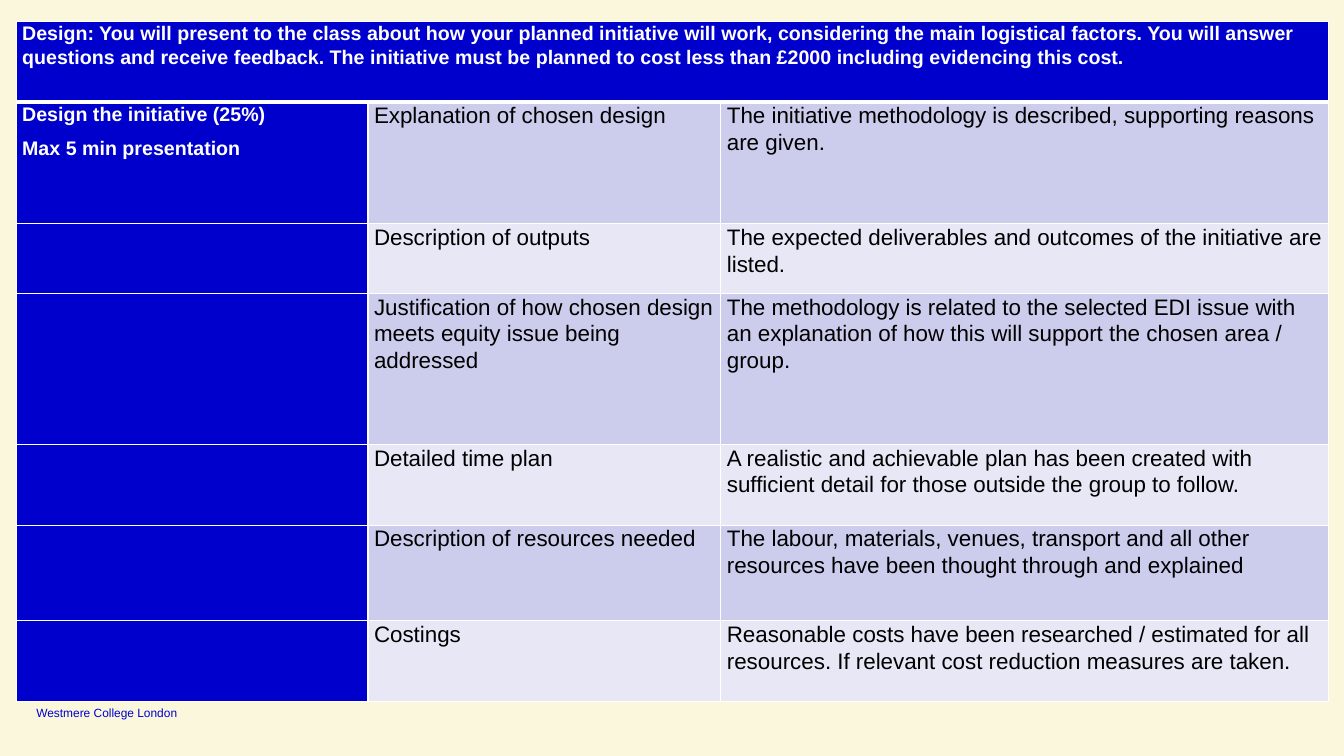
from lxml.etree import SubElement
from pptx import Presentation
from pptx.dml.color import RGBColor
from pptx.enum.text import MSO_ANCHOR
from pptx.oxml.ns import qn
from pptx.util import Inches, Pt

BLUE = RGBColor(0x00, 0x00, 0xCD)
LILAC = RGBColor(0xCC, 0xCC, 0xED)
PALE_LILAC = RGBColor(0xE7, 0xE7, 0xF6)
CREAM = RGBColor(0xFB, 0xF7, 0xDC)
WHITE = RGBColor(0xFF, 0xFF, 0xFF)
BLACK = RGBColor(0x00, 0x00, 0x00)

FONT = "Arial"
COLUMN_WIDTHS = [3.49, 3.5, 6.03]
ROW_HEIGHTS = [0.8, 1.21, 0.69, 1.5, 0.8, 0.95, 0.8]

BRIEF = (
    "Design: You will present to the class about how your planned initiative "
    "will work, considering the main logistical factors. You will answer "
    "questions and receive feedback. The initiative must be planned to cost "
    "less than £2000 including evidencing this cost."
)
ASSESSMENT = ["Design the initiative (25%)", "Max 5 min presentation"]
CRITERIA = [
    ("Explanation of chosen design",
     "The initiative methodology is described, supporting reasons are given."),
    ("Description of outputs",
     "The expected deliverables and outcomes of the initiative are listed."),
    ("Justification of how chosen design meets equity issue being addressed",
     "The methodology is related to the selected EDI issue with an explanation "
     "of how this will support the chosen area / group."),
    ("Detailed time plan",
     "A realistic and achievable plan has been created with sufficient detail "
     "for those outside the group to follow."),
    ("Description of resources needed",
     "The labour, materials, venues, transport and all other resources have "
     "been thought through and explained"),
    ("Costings",
     "Reasonable costs have been researched / estimated for all resources. "
     "If relevant cost reduction measures are taken."),
]


def add_run(paragraph, text, size, color, bold=False):
    run = paragraph.add_run()
    run.text = text
    run.font.name = FONT
    run.font.size = Pt(size)
    run.font.bold = bold
    run.font.color.rgb = color


def set_borders(cell, top=1, bottom=1):
    """Draw white cell borders; widths are in points."""
    properties = cell._tc.get_or_add_tcPr()
    widths = {"a:lnL": 1, "a:lnR": 1, "a:lnT": top, "a:lnB": bottom}
    for side, width in widths.items():
        line = SubElement(properties, qn(side), w=str(Pt(width)))
        fill = SubElement(line, qn("a:solidFill"))
        SubElement(fill, qn("a:srgbClr"), val=str(WHITE))


def fill_cell(cell, lines, background, size, color, bold=False):
    cell.margin_left = cell.margin_right = Inches(0.06)
    cell.margin_top = cell.margin_bottom = 0
    cell.fill.solid()
    cell.fill.fore_color.rgb = background
    for index, text in enumerate(lines):
        frame = cell.text_frame
        paragraph = frame.add_paragraph() if index else frame.paragraphs[0]
        paragraph.line_spacing = 1.07
        paragraph.space_after = Pt(8)
        add_run(paragraph, text, size, color, bold)


def add_criteria_table(slide):
    table = slide.shapes.add_table(
        len(ROW_HEIGHTS), len(COLUMN_WIDTHS), Inches(0.16), Inches(0.21),
        Inches(sum(COLUMN_WIDTHS)), Inches(sum(ROW_HEIGHTS))).table
    for column, width in zip(table.columns, COLUMN_WIDTHS):
        column.width = Inches(width)
    for index, (row, height) in enumerate(zip(table.rows, ROW_HEIGHTS)):
        row.height = Inches(height)
        for cell in row.cells:
            set_borders(cell, top=3 if index == 1 else 1,
                        bottom=3 if index == 0 else 1)

    table.cell(0, 0).merge(table.cell(0, 2))
    fill_cell(table.cell(0, 0), [BRIEF], BLUE, 14, WHITE, bold=True)
    for row, (criterion, standard) in enumerate(CRITERIA, start=1):
        band = LILAC if row % 2 else PALE_LILAC
        heading = ASSESSMENT if row == 1 else []
        fill_cell(table.cell(row, 0), heading, BLUE, 14, WHITE, bold=True)
        fill_cell(table.cell(row, 1), [criterion], band, 16, BLACK)
        fill_cell(table.cell(row, 2), [standard], band, 16, BLACK)


def add_institution(slide):
    frame = slide.shapes.add_textbox(
        Inches(0.36), Inches(6.99), Inches(1.55), Inches(0.15)).text_frame
    frame.word_wrap = True
    frame.vertical_anchor = MSO_ANCHOR.BOTTOM
    frame.margin_left = frame.margin_right = 0
    frame.margin_top = frame.margin_bottom = 0
    add_run(frame.paragraphs[0], "Westmere College London", 8.5, BLUE)


def main():
    presentation = Presentation()
    presentation.slide_width = Inches(13.33)
    presentation.slide_height = Inches(7.5)
    slide = presentation.slides.add_slide(presentation.slide_layouts[6])
    slide.background.fill.solid()
    slide.background.fill.fore_color.rgb = CREAM
    add_institution(slide)
    add_criteria_table(slide)
    presentation.save("out.pptx")


if __name__ == "__main__":
    main()
